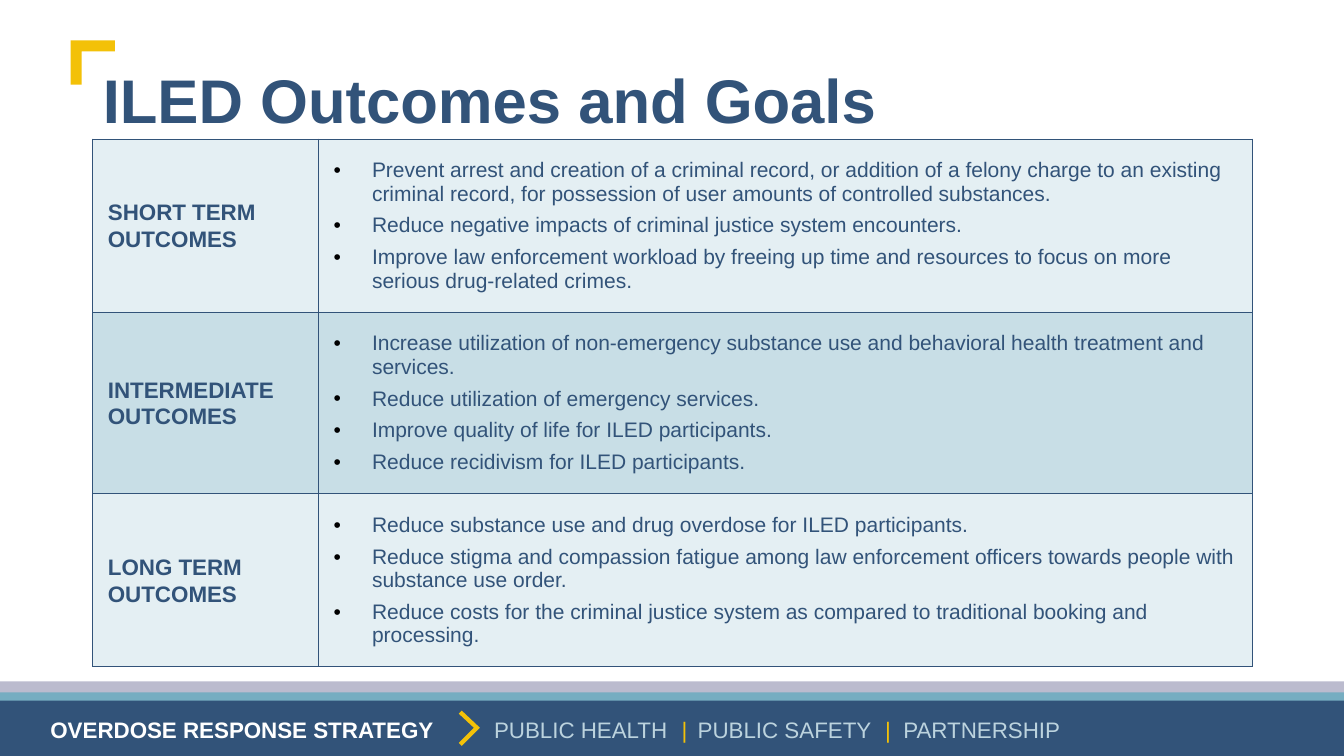
from dataclasses import dataclass

from lxml import etree
from pptx import Presentation
from pptx.dml.color import RGBColor
from pptx.enum.shapes import MSO_SHAPE
from pptx.enum.text import MSO_ANCHOR, MSO_AUTO_SIZE, PP_ALIGN
from pptx.oxml.ns import qn
from pptx.util import Inches, Pt

RECT = MSO_SHAPE.RECTANGLE
MIDDLE = MSO_ANCHOR.MIDDLE
LEFT = PP_ALIGN.LEFT
FIXED = MSO_AUTO_SIZE.NONE

FONT = "Arial"
WIDE, HIGH = 13.33, 7.5
PAD = 0.15
INDENT = 0.38
COLORS = {
    "navy": "325379",
    "teal": "76ADC1",
    "lilac": "BBBBCE",
    "gold": "F3C108",
    "sky": "BCD3DE",
    "pale": "E4EFF3",
    "mist": "C8DEE6",
    "white": "FFFFFF",
    "black": "000000",
}


@dataclass
class Band:
    top: float
    color: str


@dataclass
class Mark:
    points: list[tuple[float, float]]


@dataclass
class Part:
    text: str
    color: str
    stop: float = 0
    bold: bool = False


@dataclass
class Term:
    name: str
    height: float
    fill: str
    goals: list[str]


BANDS = [Band(6.76, "lilac"), Band(6.87, "teal"), Band(6.95, "navy")]

MARKS = [
    Mark([(4.58, 7.4), (4.55, 7.37), (4.7, 7.22), (4.55, 7.08),
          (4.58, 7.05), (4.76, 7.22)]),
    Mark([(0.7, 0.4), (1.14, 0.4), (1.14, 0.51), (0.81, 0.51),
          (0.81, 0.84), (0.7, 0.84)]),
]

# Stops are measured from the left edge of the footer box.
PARTS = [
    Part("OVERDOSE RESPONSE STRATEGY", "white", bold=True),
    Part("PUBLIC HEALTH", "sky", 4.4),
    Part("|", "gold", 6.26),
    Part("PUBLIC SAFETY", "sky", 6.42),
    Part("|", "gold", 8.28),
    Part("PARTNERSHIP", "sky", 8.46),
]

TERMS = [
    Term("SHORT TERM OUTCOMES", 1.68, "pale", [
        "Prevent arrest and creation of a criminal record, or addition of a "
        "felony charge to an existing criminal record, for possession of "
        "user amounts of controlled substances.",
        "Reduce negative impacts of criminal justice system encounters.",
        "Improve law enforcement workload by freeing up time and resources "
        "to focus on more serious drug-related crimes.",
    ]),
    Term("INTERMEDIATE OUTCOMES", 1.52, "mist", [
        "Increase utilization of non-emergency substance use and behavioral "
        "health treatment and services.",
        "Reduce utilization of emergency services.",
        "Improve quality of life for ILED participants.",
        "Reduce recidivism for ILED participants.",
    ]),
    Term("LONG TERM OUTCOMES", 1.46, "pale", [
        "Reduce substance use and drug overdose for ILED participants.",
        "Reduce stigma and compassion fatigue among law enforcement "
        "officers towards people with substance use order.",
        "Reduce costs for the criminal justice system as compared to "
        "traditional booking and processing.",
    ]),
]


def paint(fill, color: str) -> None:
    fill.solid()
    fill.fore_color.rgb = RGBColor.from_string(COLORS[color])


def add_run(para, text: str, size: float, color: str, bold: bool = False) -> None:
    run = para.add_run()
    run.text = text
    font = run.font
    font.name, font.size, font.bold = FONT, Pt(size), bold
    font.color.rgb = RGBColor.from_string(COLORS[color])


def finish(shape, color: str) -> None:
    """Give a shape a flat fill with no outline or shadow."""
    shape.shadow.inherit = False
    paint(shape.fill, color)
    shape.line.fill.background()


def add_title(slide, text: str) -> None:
    title = slide.shapes.title
    title.left, title.top = Inches(0.92), Inches(0.4)
    title.width, title.height = Inches(11.5), Inches(1.25)
    frame = title.text_frame
    frame.auto_size, frame.vertical_anchor = FIXED, MIDDLE
    para = frame.paragraphs[0]
    para.alignment, para.line_spacing = LEFT, 0.9
    add_run(para, text, 44, "navy", True)


def add_band(slide, band: Band) -> None:
    shape = slide.shapes.add_shape(
        RECT, 0, Inches(band.top), Inches(WIDE), Inches(HIGH - band.top))
    finish(shape, band.color)


def add_mark(slide, mark: Mark) -> None:
    points = [(Inches(x), Inches(y)) for x, y in mark.points]
    path = slide.shapes.build_freeform(*points[0])
    path.add_line_segments(points[1:])
    finish(path.convert_to_shape(), "gold")


def add_footer(slide, parts: list[Part]) -> None:
    """Set the parts on one line, each at its own tab stop."""
    box = slide.shapes.add_textbox(
        Inches(0.5), Inches(7.13), Inches(12.34), Inches(0.2))
    frame = box.text_frame
    frame.word_wrap = True
    frame.margin_left = frame.margin_right = frame.margin_bottom = 0
    frame.margin_top = Inches(0.02)
    para = frame.paragraphs[0]
    para.line_spacing = 0.84
    tabs = etree.SubElement(para._p.get_or_add_pPr(), qn("a:tabLst"))
    for part in parts:
        if part.stop:
            etree.SubElement(tabs, qn("a:tab"),
                             pos=str(Inches(part.stop)), algn="l")
        lead = "\t" if part.stop else ""
        add_run(para, lead + part.text, 16, part.color, part.bold)


def add_bullet(para) -> None:
    props = para._p.get_or_add_pPr()
    props.set("marL", str(Inches(INDENT)))
    props.set("indent", str(-Inches(INDENT)))
    tint = etree.SubElement(props, qn("a:buClr"))
    etree.SubElement(tint, qn("a:srgbClr"), val=COLORS["black"])
    etree.SubElement(props, qn("a:buFont"), typeface=FONT)
    etree.SubElement(props, qn("a:buChar"), char="•")


def style_cell(cell, color: str) -> None:
    cell.vertical_anchor = MIDDLE
    cell.margin_left = cell.margin_right = Inches(PAD)
    cell.margin_top = cell.margin_bottom = Inches(PAD)
    props = cell._tc.get_or_add_tcPr()
    for side in ("a:lnL", "a:lnR", "a:lnT", "a:lnB"):
        edge = etree.SubElement(props, qn(side), w=str(Pt(1)))
        solid = etree.SubElement(edge, qn("a:solidFill"))
        etree.SubElement(solid, qn("a:srgbClr"), val=COLORS["navy"])
    paint(cell.fill, color)


def add_terms(slide, terms: list[Term]) -> None:
    total = sum(term.height for term in terms)
    table = slide.shapes.add_table(
        len(terms), 2, Inches(0.92), Inches(1.38),
        Inches(11.5), Inches(total)).table
    table.first_row = table.horz_banding = False
    for col, width in zip(table.columns, (2.24, 9.26)):
        col.width = Inches(width)
    for row, term in zip(table.rows, terms):
        row.height = Inches(term.height)
        head, body = row.cells
        for cell in (head, body):
            style_cell(cell, term.fill)
        para = head.text_frame.paragraphs[0]
        para.line_spacing = 1.07
        add_run(para, term.name, 16, "navy", True)
        frame = body.text_frame
        for i, goal in enumerate(term.goals):
            para = frame.add_paragraph() if i else frame.paragraphs[0]
            para.space_after = Pt(6)
            add_bullet(para)
            add_run(para, goal, 15, "navy")


def main() -> None:
    deck = Presentation()
    deck.slide_width, deck.slide_height = Inches(WIDE), Inches(HIGH)
    slide = deck.slides.add_slide(deck.slide_layouts[5])
    add_title(slide, "ILED Outcomes and Goals")
    for band in BANDS:
        add_band(slide, band)
    add_footer(slide, PARTS)
    for mark in MARKS:
        add_mark(slide, mark)
    add_terms(slide, TERMS)
    deck.save("out.pptx")


if __name__ == "__main__":
    main()
